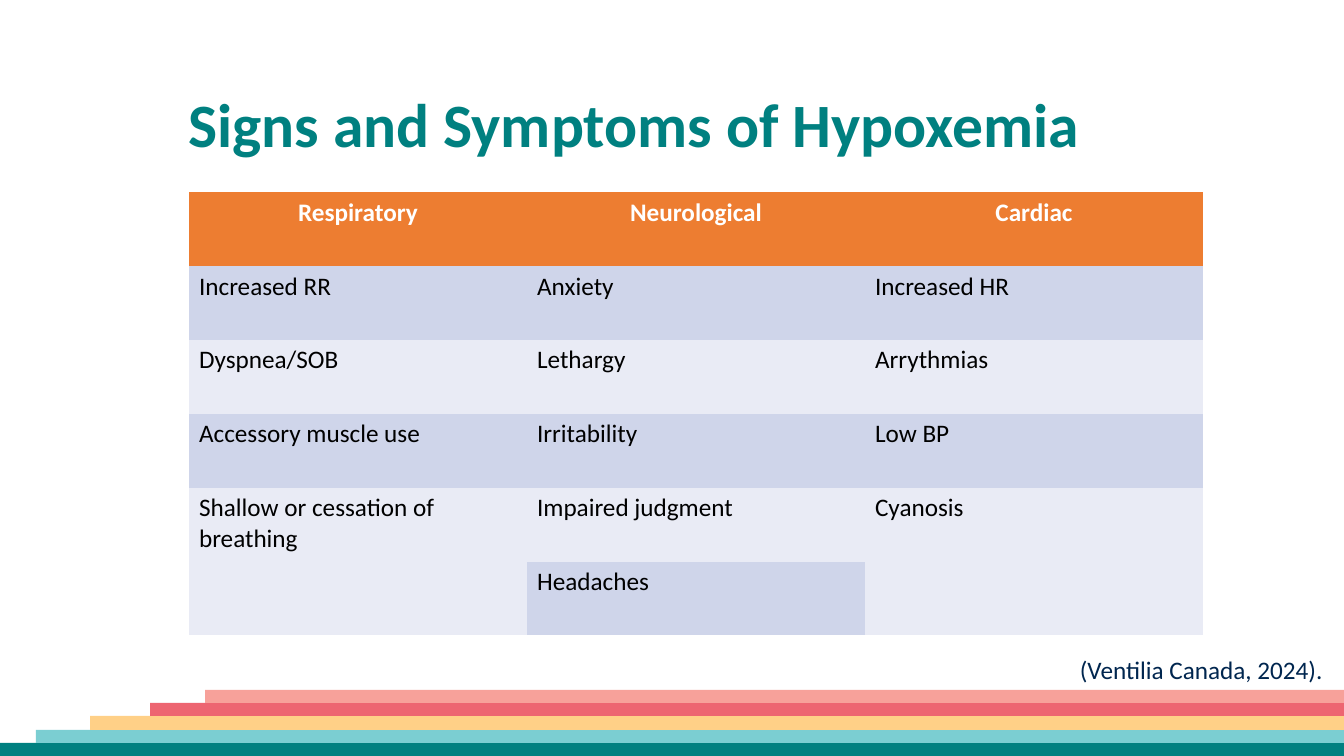
from pptx import Presentation
from pptx.dml.color import RGBColor
from pptx.enum.shapes import MSO_SHAPE as Shape
from pptx.enum.text import MSO_ANCHOR as Anchor, PP_ALIGN as Align
from pptx.util import Emu, Pt

SLIDE_W, SLIDE_H = 1344, 756
EMU_PER_PX = 12192000 / SLIDE_W
FONT = "Calibri"

TEAL = RGBColor(0x00, 0x80, 0x80)
AQUA = RGBColor(0x7B, 0xCE, 0xD2)
YELLOW = RGBColor(0xFF, 0xD0, 0x87)
RED = RGBColor(0xED, 0x65, 0x71)
PINK = RGBColor(0xF7, 0xA1, 0x9A)
ORANGE = RGBColor(0xED, 0x7D, 0x31)
BAND_DARK = RGBColor(0xCF, 0xD5, 0xEA)
BAND_LIGHT = RGBColor(0xE9, 0xEB, 0xF5)
NAVY = RGBColor(0x00, 0x26, 0x4F)
WHITE = RGBColor(0xFF, 0xFF, 0xFF)
BLACK = RGBColor(0x00, 0x00, 0x00)

PLAIN_TABLE_STYLE = "{2D5ABB26-0587-4C30-8999-92F81FD0307C}"

# Stripes from the bottom up: left edge and colour
STRIPES = [(0, TEAL), (36, AQUA), (90, YELLOW), (150, RED), (205, PINK)]
STRIPES_H = 66

SYMPTOMS = [
    ["Respiratory", "Neurological", "Cardiac"],
    ["Increased RR", "Anxiety", "Increased HR"],
    ["Dyspnea/SOB", "Lethargy", "Arrythmias"],
    ["Accessory muscle use", "Irritability", "Low BP"],
    ["Shallow or cessation of breathing", "Impaired judgment", "Cyanosis"],
    ["", "Headaches", ""],
]
COLUMN_W = 338
ROW_HEIGHTS = [74, 74, 74, 74, 74, 73]


def px(length):
    return Emu(round(length * EMU_PER_PX))


def box(*lengths):
    return [px(length) for length in lengths]


def style_text(frame, size, color, bold=False, align=Align.LEFT):
    for paragraph in frame.paragraphs:
        paragraph.alignment = align
        for run in paragraph.runs:
            run.font.name = FONT
            run.font.size = Pt(size)
            run.font.bold = bold
            run.font.color.rgb = color


def add_stripes(slide):
    bottom = SLIDE_H
    for level, (left, color) in enumerate(STRIPES, start=1):
        top = round(SLIDE_H - STRIPES_H * level / len(STRIPES))
        stripe = slide.shapes.add_shape(
            Shape.RECTANGLE, *box(left, top, SLIDE_W - left, bottom - top))
        stripe.shadow.inherit = False
        stripe.fill.solid()
        stripe.fill.fore_color.rgb = color
        stripe.line.fill.background()
        bottom = top


def add_label(slide, text, bounds, **style):
    label = slide.shapes.add_textbox(*box(*bounds)).text_frame
    label.word_wrap = True
    label.text = text
    style_text(label, **style)
    return label


def add_symptom_table(slide, left, top):
    rows, columns = len(SYMPTOMS), len(SYMPTOMS[0])
    frame = slide.shapes.add_table(
        rows, columns, *box(left, top, COLUMN_W * columns, sum(ROW_HEIGHTS)))
    symptoms = frame.table
    symptoms._tbl.tblPr.find("{*}tableStyleId").text = PLAIN_TABLE_STYLE

    for column in symptoms.columns:
        column.width = px(COLUMN_W)
    for row, height in zip(symptoms.rows, ROW_HEIGHTS):
        row.height = px(height)

    for r, texts in enumerate(SYMPTOMS):
        header = r == 0
        band = ORANGE if header else BAND_DARK if r % 2 else BAND_LIGHT
        for c, text in enumerate(texts):
            cell = symptoms.cell(r, c)
            cell.fill.solid()
            cell.fill.fore_color.rgb = band
            cell.text = text
            style_text(cell.text_frame, 18, WHITE if header else BLACK, header,
                       Align.CENTER if header else Align.LEFT)

    # The outer columns end in one cell two rows high
    for c in (0, columns - 1):
        symptoms.cell(rows - 2, c).merge(symptoms.cell(rows - 1, c))


def main():
    deck = Presentation()
    deck.slide_width, deck.slide_height = px(SLIDE_W), px(SLIDE_H)
    slide = deck.slides.add_slide(deck.slide_layouts[6])

    # Footer decoration
    add_stripes(slide)

    # Title
    title = add_label(slide, "Signs and Symptoms of Hypoxemia", (55, 86, 1159, 83),
                      size=44, color=TEAL, bold=True, align=Align.CENTER)
    title.vertical_anchor = Anchor.MIDDLE
    title.paragraphs[0].line_spacing = 0.9

    # Symptoms by body system
    add_symptom_table(slide, 189, 192)

    # Citation
    add_label(slide, "(Ventilia Canada, 2024).", (1070, 649, 287, 40),
              size=18, color=NAVY)

    deck.save("out.pptx")


if __name__ == "__main__":
    main()
